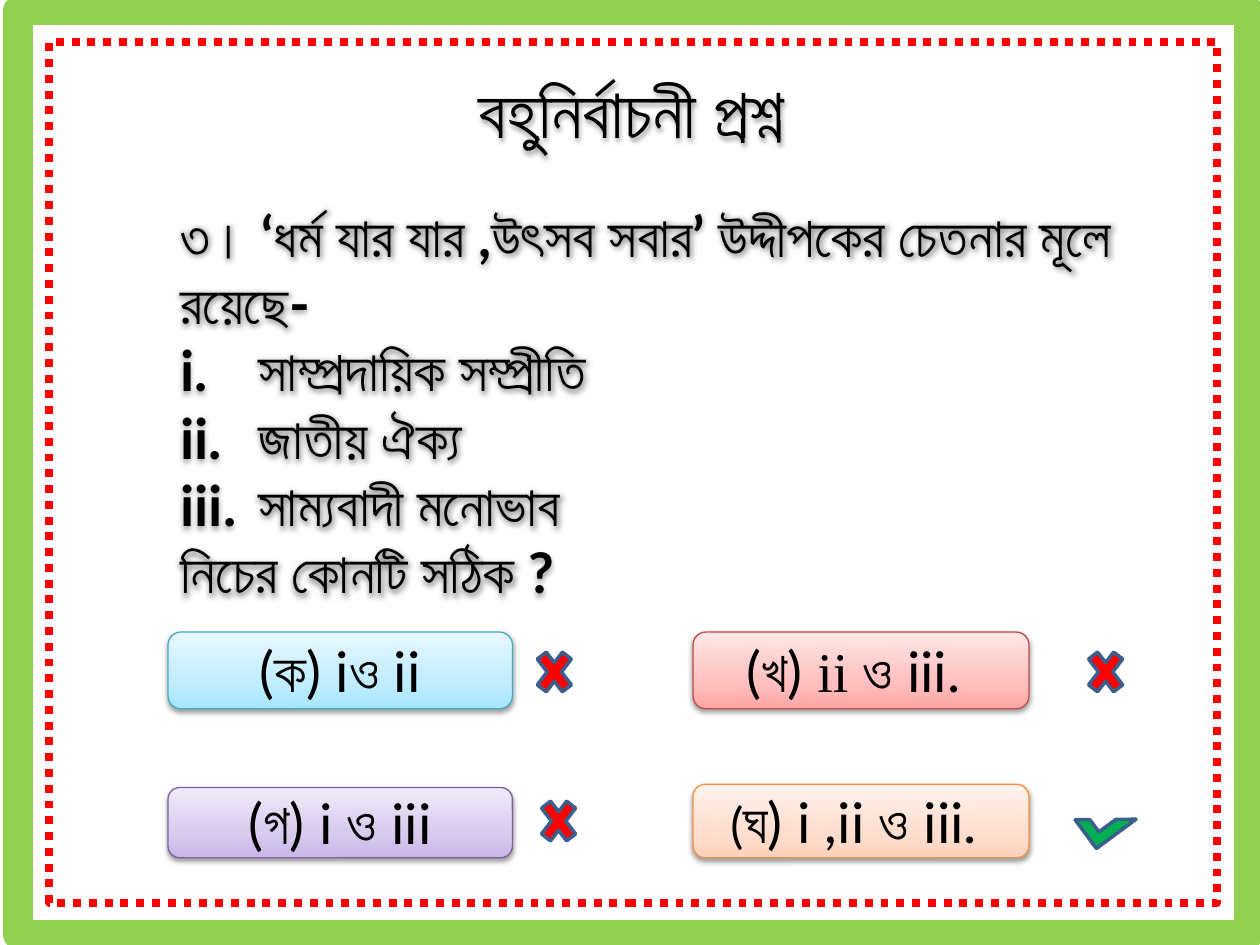
import copy
import pptx
import pptx.util
import pptx.dml.color
import pptx.enum.dml
import pptx.enum.shapes
import pptx.enum.text
import pptx.oxml.ns
import lxml.etree

WIDE, HIGH = 10, 7.5
COLS, ROWS = 60, 45
FONT = "Lato"
HUES = {
    "frame": "92D050", "dots": "FF0000", "ink": "000000",
    "wrong": "FF0000", "right": "00B050", "edge": "3A5F8C",
}
TINTS = {
    "blue": ("46AAC5", "A7E6FF", "C1EDFF", "E7F8FF"),
    "red": ("BF4C48", "FFA6A5", "FFC0BF", "FFE7E7"),
    "violet": ("7D60A0", "C9B5E8", "D8CBEE", "F0EAF9"),
    "orange": ("F69240", "FFD2BD", "FFDED0", "FFF2ED"),
}
KIND = pptx.enum.shapes.MSO_SHAPE
ALIGN = pptx.enum.text.PP_ALIGN


def rgb(code):
    """Turn a hex string into a colour."""
    return pptx.dml.color.RGBColor.from_string(code)


def grid(box):
    """Turn columns and rows into left, top, width and height."""
    wide, high = WIDE / COLS, HIGH / ROWS
    return [pptx.util.Inches(n * s) for n, s in zip(box, (wide, high) * 2)]


def node(root, tag, **attrs):
    """Add a drawing element with its attributes."""
    part = lxml.etree.SubElement(root, pptx.oxml.ns.qn(tag))
    for key, value in attrs.items():
        part.set(key, str(value))
    return part


def shade(shape):
    """Give a shape a soft shadow below it."""
    shape.shadow.inherit = False
    root = shape._element.spPr.find(pptx.oxml.ns.qn("a:effectLst"))
    cast = node(root, "a:outerShdw", blurRad=pptx.util.Pt(3.1),
                dist=pptx.util.Pt(1.6), dir=90 * 60000, rotWithShape=0)
    node(node(cast, "a:srgbClr", val=HUES["ink"]), "a:alpha", val=38000)


def write(para, text, size=32, font=FONT, bold=False, align=None):
    """Add a run of text to a paragraph."""
    run = para.add_run()
    run.text = text
    run.font.size = pptx.util.Pt(size)
    run.font.name = font
    run.font.bold = bold
    run.font.color.rgb = rgb(HUES["ink"])
    node(run._r.get_or_add_rPr(), "a:cs", typeface=font)
    if align is not None:
        para.alignment = align


def setup(frame):
    """Wrap the text and centre it upright."""
    frame.word_wrap = True
    frame.auto_size = pptx.enum.text.MSO_AUTO_SIZE.NONE
    frame.vertical_anchor = pptx.enum.text.MSO_ANCHOR.MIDDLE


def draw(slide, kind, box, line, width, fill=None):
    """Place a preset shape with its line and fill."""
    shape = slide.shapes.add_shape(kind, *grid(box))
    shape.shadow.inherit = False
    shape.line.color.rgb = rgb(line)
    shape.line.width = pptx.util.Pt(width)
    if fill:
        shape.fill.solid()
        shape.fill.fore_color.rgb = rgb(fill)
    else:
        shape.fill.background()
    return shape


def border(slide, box):
    """Draw the solid frame and the dotted one inside it."""
    left, top, wide, high = box
    draw(slide, KIND.RECTANGLE, box, HUES["frame"], 16.75)
    inner = (left + 1.5, top + 1.5, wide - 3, high - 3)
    dots = draw(slide, KIND.RECTANGLE, inner, HUES["dots"], 4.5)
    dots.line.dash_style = pptx.enum.dml.MSO_LINE.ROUND_DOT


def head(slide, box):
    """Fill the title placeholder."""
    title = slide.shapes.title
    title.left, title.top, title.width, title.height = grid(box)
    setup(title.text_frame)
    write(title.text_frame.paragraphs[0], "বহুনির্বাচনী প্রশ্ন ",
          size=40, align=ALIGN.CENTER)
    shade(title)


def query(slide, box):
    """Write the question with its numbered claims."""
    body = slide.shapes.add_textbox(*grid(box))
    frame = body.text_frame
    setup(frame)
    claims = ("সাম্প্রদায়িক সম্প্রীতি", "জাতীয় ঐক্য", "সাম্যবাদী মনোভাব")
    lines = ("৩। ‘ধর্ম যার যার ,উৎসব সবার’ উদ্দীপকের চেতনার মূলে রয়েছে-",
             *claims, "নিচের কোনটি সঠিক ?")
    for rank, text in enumerate(lines):
        para = frame.add_paragraph() if rank else frame.paragraphs[0]
        write(para, text, bold=True, align=ALIGN.LEFT)
        if text in claims:
            props = para._p.get_or_add_pPr()
            dent = pptx.util.Inches(0.62)
            props.set("marL", str(dent))
            props.set("indent", str(-dent))
            node(props, "a:buFont", typeface="+mj-lt")
            node(props, "a:buAutoNum", type="romanLcPeriod")
    shade(body)


def choice(slide, box, tint, runs):
    """Draw one answer on a shaded button."""
    line, *tones = TINTS[tint]
    shape = draw(slide, KIND.ROUNDED_RECTANGLE, box, line, 0.75)
    shape.fill.gradient()
    shape.fill.gradient_angle = 90
    stops = shape._element.spPr.find(".//" + pptx.oxml.ns.qn("a:gsLst"))
    stops.insert(1, copy.deepcopy(stops[0]))
    for stop, tone, spot in zip(shape.fill.gradient_stops, tones, (0, 0.35, 1)):
        stop.color.rgb = rgb(tone)
        stop.position = spot
    shade(shape)
    setup(shape.text_frame)
    for text, form in runs:
        write(shape.text_frame.paragraphs[0], text, align=ALIGN.CENTER, **form)


def cross(slide, left, top):
    """Mark a wrong answer."""
    draw(slide, KIND.MATH_MULTIPLY, (left, top, 2.3, 3),
         HUES["edge"], 2, HUES["wrong"])


def tick(slide, box):
    """Mark the right answer."""
    mark = draw(slide, KIND.HALF_FRAME, box, HUES["edge"], 2, HUES["right"])
    mark.rotation = 233.6


def main():
    """Build the slide and save it."""
    deck = pptx.Presentation()
    deck.slide_width = pptx.util.Inches(WIDE)
    deck.slide_height = pptx.util.Inches(HIGH)
    slide = deck.slides.add_slide(deck.slide_layouts[5])
    border(slide, (0.85, 0.5, 58.6, 44))
    head(slide, (15, 2.75, 31, 5))
    query(slide, (8, 9.4, 47, 19.6))
    choices = (
        ((8, 30.1, 16.4, 3.65), "blue", [("(ক) iও ii", {})]),
        ((33, 30.1, 16, 3.65), "red",
         [("(খ) ", {}), ("ii ", {"font": "Times New Roman"}), ("ও iii. ", {})]),
        ((8, 37.5, 16.4, 3.35), "violet", [("(গ) i ও iii", {})]),
        ((33, 37.35, 16, 3.5), "orange",
         [("(", {"size": 28}), ("ঘ) i ,ii ও iii. ", {})]),
    )
    for box, tint, runs in choices:
        choice(slide, box, tint, runs)
    for left, top in ((25.25, 30.5), (51.5, 30.5), (25.45, 37.6)):
        cross(slide, left, top)
    tick(slide, (51.8, 37.85, 1.7, 2.35))
    deck.save("out.pptx")


if __name__ == "__main__":
    main()
